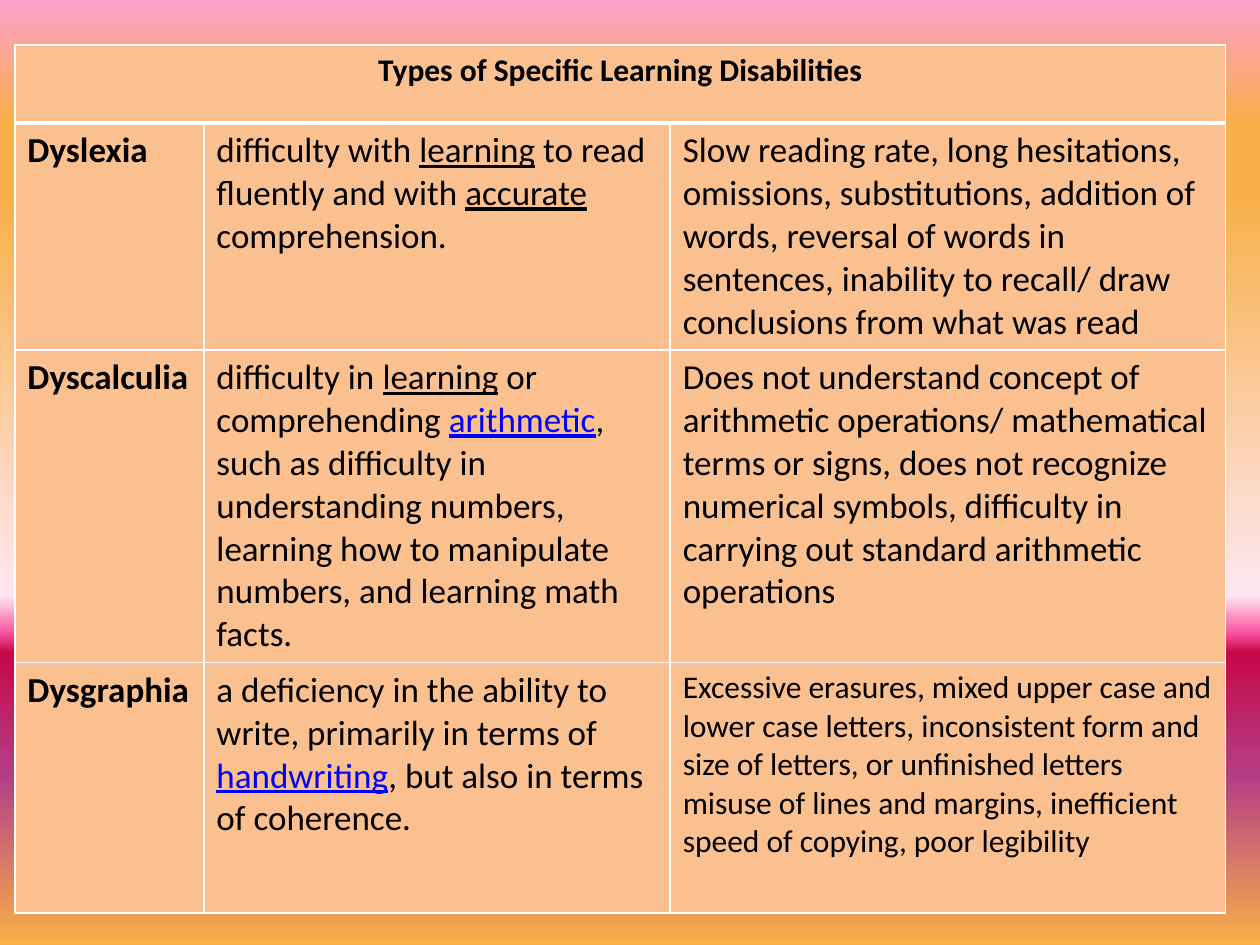
import pptx
import pptx.dml.color
import pptx.enum.text
import pptx.oxml
import pptx.oxml.ns
import pptx.util
from lxml import etree

Cm = pptx.util.Cm
Pt = pptx.util.Pt
RGBColor = pptx.dml.color.RGBColor
qn = pptx.oxml.ns.qn

BLACK = RGBColor(0x00, 0x00, 0x00)
WHITE = RGBColor(0xFF, 0xFF, 0xFF)
BLUE = RGBColor(0x00, 0x00, 0xFF)
PEACH = RGBColor(0xFA, 0xC0, 0x90)
PINK = RGBColor(0xFC, 0x9F, 0xCB)
ORANGE = RGBColor(0xF8, 0xB0, 0x49)
BLUSH = RGBColor(0xFE, 0xE7, 0xF2)
MAGENTA = RGBColor(0xF9, 0x52, 0xA0)
CRIMSON = RGBColor(0xC5, 0x08, 0x49)
PURPLE = RGBColor(0xB4, 0x3E, 0x85)

SUNSET = [(0, PINK), (13, ORANGE), (21, ORANGE), (63, BLUSH),
          (67, MAGENTA), (69, CRIMSON), (82, PURPLE), (100, ORANGE)]
TITLE = "Types of Specific Learning Disabilities"
LINKS = {"arithmetic", "handwriting"}
COL_WIDTHS = [3.81, 9.4, 11.2]
ROW_HEIGHTS = [1.57, 4.55, 6.22, 5.05]
DISABILITIES = [
    ("Dyslexia",
     "difficulty with _learning_ to read fluently and with _accurate _comprehension.",
     "Slow reading rate, long hesitations, omissions, substitutions, addition of "
     "words, reversal of words in sentences, inability to recall/ draw conclusions "
     "from what was read", 20),
    ("Dyscalculia",
     "difficulty in _learning_ or comprehending _arithmetic_, such as difficulty in "
     "understanding numbers, learning how to manipulate numbers, and learning math facts.",
     "Does not understand concept of arithmetic operations/ mathematical terms or "
     "signs, does not recognize numerical symbols, difficulty in carrying out "
     "standard arithmetic operations", 20),
    ("Dysgraphia",
     "a deficiency in the ability to write, primarily in terms of _handwriting_, "
     "but also in terms of coherence.",
     "Excessive erasures, mixed upper case and lower case letters, inconsistent form "
     "and size of letters, or unfinished letters\n"
     "misuse of lines and margins, inefficient speed of copying, poor legibility", 18),
]


class Deck:
    font = "Calibri"

    def __init__(self, prs):
        self.s = prs.slides.add_slide(prs.slide_layouts[6])

    def background(self, stops):
        fill = self.s.background.fill
        fill.gradient()
        fill.gradient_angle = 270
        gs_lst = next(self.s._element.iter(qn("a:gsLst")))
        for gs in list(gs_lst):
            gs_lst.remove(gs)
        for pos, color in stops:
            gs = etree.SubElement(gs_lst, qn("a:gs"), pos=str(pos * 1000))
            etree.SubElement(gs, qn("a:srgbClr"), val=str(color))

    def table(self, left, top, widths, heights):
        shape = self.s.shapes.add_table(
            len(heights), len(widths), Cm(left), Cm(top),
            Cm(sum(widths)), Cm(sum(heights)))
        tbl = shape.table
        for col, width in zip(tbl.columns, widths):
            col.width = Cm(width)
        for row, height in zip(tbl.rows, heights):
            row.height = Cm(height)
        for cell in tbl.iter_cells():
            cell.fill.solid()
            cell.fill.fore_color.rgb = PEACH
        return tbl

    def borders(self, cell, top=1, bottom=1):
        tc_pr = cell._tc.get_or_add_tcPr()
        sides = [("L", 1), ("R", 1), ("T", top), ("B", bottom)]
        for i, (side, width) in enumerate(sides):
            ln = pptx.oxml.parse_xml(
                f'<a:ln{side} {pptx.oxml.ns.nsdecls("a")} w="{Pt(width)}">'
                f'<a:solidFill><a:srgbClr val="{WHITE}"/></a:solidFill></a:ln{side}>')
            tc_pr.insert(i, ln)

    def text(self, cell, text, size, bold=False, align=None):
        tf = cell.text_frame
        for n, line in enumerate(text.split("\n")):
            p = tf.add_paragraph() if n else tf.paragraphs[0]
            p.alignment = align
            for i, part in enumerate(line.split("_")):
                r = p.add_run()
                r.text = part
                r.font.name = self.font
                r.font.size = Pt(size)
                r.font.bold = bold
                r.font.underline = i % 2 == 1
                r.font.color.rgb = BLUE if part in LINKS else BLACK


def main():
    prs = pptx.Presentation()
    prs.slide_width, prs.slide_height = Cm(25.4), Cm(19.05)
    deck = Deck(prs)
    deck.background(SUNSET)

    tbl = deck.table(0.3, 0.91, COL_WIDTHS, ROW_HEIGHTS)
    for i, row in enumerate(tbl.rows):
        for cell in row.cells:
            deck.borders(cell, top=3 if i == 1 else 1, bottom=3 if i == 0 else 1)

    title = tbl.cell(0, 0)
    title.merge(tbl.cell(0, 2))
    deck.text(title, TITLE, 18, True, pptx.enum.text.PP_ALIGN.CENTER)
    for i, (name, meaning, signs, size) in enumerate(DISABILITIES, 1):
        deck.text(tbl.cell(i, 0), name, 20, True)
        deck.text(tbl.cell(i, 1), meaning, 20)
        deck.text(tbl.cell(i, 2), signs, size)

    prs.save("out.pptx")


if __name__ == "__main__":
    main()
